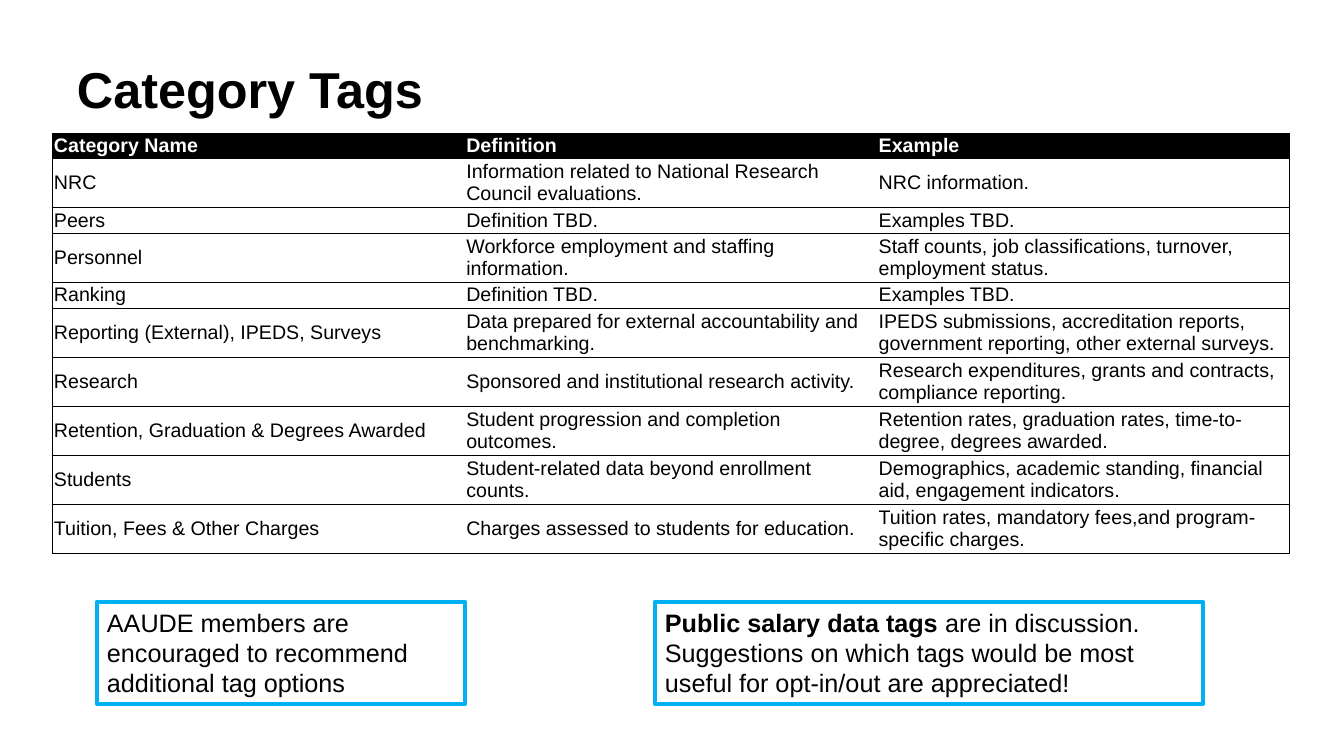
from lxml.etree import SubElement
from pptx import Presentation
from pptx.dml.color import RGBColor
from pptx.enum.text import MSO_ANCHOR, MSO_AUTO_SIZE
from pptx.oxml.ns import qn
from pptx.util import Pt

# Content
TITLE = "Category Tags"
HEADER = ("Category Name", "Definition", "Example")
# (category, definition, example, lines of text in the row)
CATEGORIES = [
    ("NRC", "Information related to National Research Council evaluations.",
     "NRC information.", 2),
    ("Peers", "Definition TBD.", "Examples TBD.", 1),
    ("Personnel", "Workforce employment and staffing information.",
     "Staff counts, job classifications, turnover, employment status.", 2),
    ("Ranking", "Definition TBD.", "Examples TBD.", 1),
    ("Reporting (External), IPEDS, Surveys",
     "Data prepared for external accountability and benchmarking.",
     "IPEDS submissions, accreditation reports, government reporting, "
     "other external surveys.", 2),
    ("Research", "Sponsored and institutional research activity.",
     "Research expenditures, grants and contracts, compliance reporting.", 2),
    ("Retention, Graduation & Degrees Awarded",
     "Student progression and completion outcomes.",
     "Retention rates, graduation rates, time-to-degree, degrees awarded.", 2),
    ("Students", "Student-related data beyond enrollment counts.",
     "Demographics, academic standing, financial aid, engagement indicators.", 2),
    ("Tuition, Fees & Other Charges",
     "Charges assessed to students for education.",
     "Tuition rates, mandatory fees,and program-specific charges.", 2),
]
# (left, width, runs as (text, bold))
NOTES = [
    (97, 368, [("AAUDE members are encouraged to recommend additional tag options",
                False)]),
    (655, 548, [("Public salary data tags ", True),
                ("are in discussion. Suggestions on which tags would be most "
                 "useful for opt-in/out are appreciated!", False)]),
]


class Theme:
    font = "Arial"
    ink = RGBColor(0, 0, 0)
    paper = RGBColor(255, 255, 255)
    accent = RGBColor(0x00, 0xB0, 0xF0)
    title, cell, note = Pt(36), Pt(14), Pt(18)
    rule, frame = Pt(0.5), Pt(3)


# Layout in px
SLIDE = (1344, 756)
TITLE_BOX = (67, 60, 1175, 125)
TABLE_LEFT, TABLE_TOP, COLUMN = 52, 133, 412
ROW_HEIGHT = {1: 24, 2: 46}
NOTE_TOP, NOTE_HEIGHT = 602, 102


def px(n):
    return round(n * 914400 / 100.8)


def style(r, size, color=Theme.ink, bold=False):
    r.font.name, r.font.size, r.font.bold = Theme.font, size, bold
    r.font.color.rgb = color


def add_text(s, box, runs, size):
    sp = s.shapes.add_textbox(*map(px, box))
    tf = sp.text_frame
    tf.word_wrap = True
    for text, bold in runs:
        r = tf.paragraphs[0].add_run()
        r.text = text
        style(r, size, bold=bold)
    return sp


def set_borders(cell, drawn):
    tc_pr = cell._tc.get_or_add_tcPr()
    for side in "LRTB":
        ln = SubElement(tc_pr, qn(f"a:ln{side}"), w=str(Theme.rule))
        if side in drawn:
            fill = SubElement(ln, qn("a:solidFill"))
            SubElement(fill, qn("a:srgbClr"), val=str(Theme.ink))
        else:
            SubElement(ln, qn("a:noFill"))


def fill_cell(cell, text, is_header, drawn):
    set_borders(cell, drawn)
    if is_header:
        cell.fill.solid()
        cell.fill.fore_color.rgb = Theme.ink
    else:
        cell.fill.background()
    cell.vertical_anchor = MSO_ANCHOR.MIDDLE
    cell.margin_left = cell.margin_right = px(2)
    cell.margin_top = cell.margin_bottom = px(1)
    cell.text_frame.text = text
    style(cell.text_frame.paragraphs[0].runs[0], Theme.cell,
          Theme.paper if is_header else Theme.ink, is_header)


def add_category_table(s):
    rows = [(*HEADER, 1), *CATEGORIES]
    heights = [ROW_HEIGHT[row[-1]] for row in rows]
    last = len(HEADER) - 1
    table = s.shapes.add_table(
        len(rows), len(HEADER), px(TABLE_LEFT), px(TABLE_TOP),
        px(COLUMN * len(HEADER)), px(sum(heights))).table
    table.horz_banding = False
    for column in table.columns:
        column.width = px(COLUMN) + px(0.4)
    for i, (*texts, _) in enumerate(rows):
        table.rows[i].height = px(heights[i])
        for j, text in enumerate(texts):
            # Horizontal rules everywhere, vertical ones only outside
            drawn = "TB" + ("L" if j == 0 else "") + ("R" if j == last else "")
            fill_cell(table.cell(i, j), text, i == 0, drawn)


def main():
    prs = Presentation()
    prs.slide_width, prs.slide_height = map(px, SLIDE)
    s = prs.slides.add_slide(prs.slide_layouts[6])

    # Title
    sp = add_text(s, TITLE_BOX, [(TITLE, True)], Theme.title)
    sp.text_frame.paragraphs[0].line_spacing = 0.9

    # Categories
    add_category_table(s)

    # Framed notes
    for left, width, runs in NOTES:
        sp = add_text(s, (left, NOTE_TOP, width, NOTE_HEIGHT), runs, Theme.note)
        sp.text_frame.auto_size = MSO_AUTO_SIZE.SHAPE_TO_FIT_TEXT
        sp.line.color.rgb = Theme.accent
        sp.line.width = Theme.frame

    prs.save("out.pptx")


if __name__ == "__main__":
    main()
